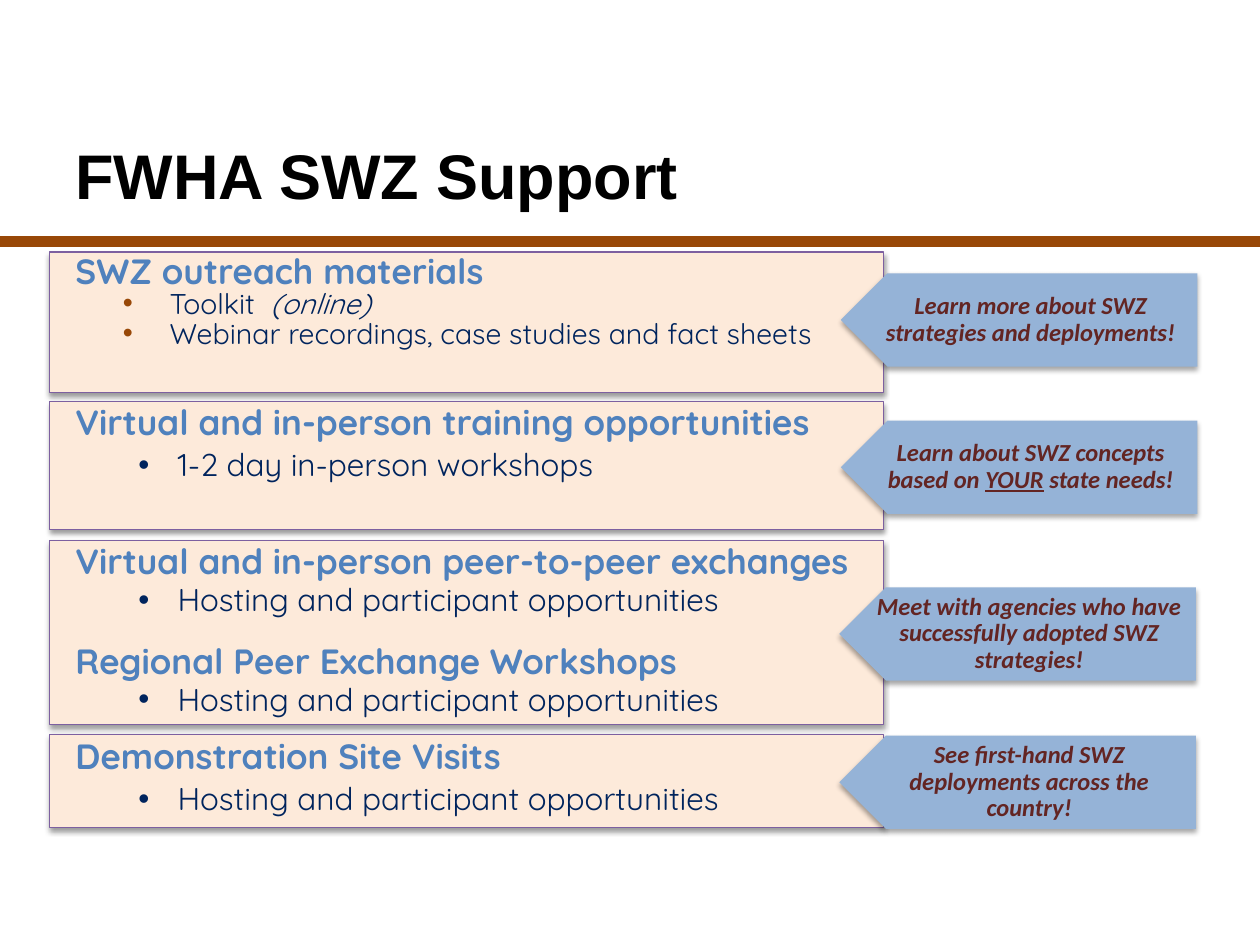
from dataclasses import dataclass

import pptx
import pptx.dml.color
import pptx.enum.shapes
import pptx.enum.text
import pptx.oxml
import pptx.oxml.ns
import pptx.util
from pptx.util import Cm

BODY_FONT = "Quicksand"
HEADING_COLOR = "4F81BD"
ITEM_COLOR = "00245D"
RULE_COLOR = "984807"
SHADOW_COLOR = "000000"


@dataclass
class Span:
    text: str
    italic: bool = False
    underline: bool = False


@dataclass
class Line:
    spans: list[Span]
    heading: bool = False
    size: float = 18
    spacing: float | None = 0.9
    before: float = 3.6
    indent: float = 2.06
    hanging: float = 0.79
    bullet_color: str = ITEM_COLOR


@dataclass
class Topic:
    top: float
    height: float
    text_top: float
    text_width: float
    text_height: float
    lines: list[Line]
    callout_top: float
    callout_left: float
    callout: list[Span]


def heading(text: str, spacing: float | None = 0.9, before: float = 0) -> Line:
    return Line([Span(text)], True, 20, spacing, before)


def item(text: str, spacing: float = 0.9) -> Line:
    return Line([Span(text)], spacing=spacing)


def outreach(*spans: Span) -> Line:
    return Line(list(spans), False, 16.3, 0.7, 3.3, 1.9, 0.94, RULE_COLOR)


HOSTING = "Hosting and participant opportunities"
TOPICS = [
    Topic(5.08, 2.84, 5.13, 15.67, 2.69,
          [heading("SWZ outreach materials", 0.7),
           outreach(Span("Toolkit  "), Span("(online)", italic=True)),
           outreach(Span("Webinar recordings, case studies and fact sheets"))],
          5.51, 16.95, [Span("Learn more about SWZ strategies and deployments!", True)]),
    Topic(8.1, 2.57, 8.05, 16.56, 2.72,
          [heading("Virtual and in-person training opportunities"),
           item("1-2 day in-person workshops")],
          8.48, 16.95, [Span("Learn about SWZ concepts based on ", True),
                        Span("YOUR", True, True), Span(" state needs!", True)]),
    Topic(10.9, 3.71, 10.92, 16.61, 3.96,
          [heading("Virtual and in-person peer-to-peer exchanges", 0.8),
           item(HOSTING, 0.8),
           heading("Regional Peer Exchange Workshops", None, 12),
           item(HOSTING, 0.8)],
          11.84, 16.92,
          [Span("Meet with agencies who have successfully adopted SWZ strategies!", True)]),
    Topic(14.81, 1.88, 14.78, 15.67, 1.93,
          [heading("Demonstration Site Visits"), item(HOSTING)],
          14.83, 16.92, [Span("See first-hand SWZ deployments across the country!", True)]),
]


def rgb(color: str) -> pptx.dml.color.RGBColor:
    return pptx.dml.color.RGBColor.from_string(color)


def element(markup: str):
    namespace = pptx.oxml.ns.nsdecls("a")
    return pptx.oxml.parse_xml(markup.replace(">", f" {namespace}>", 1))


def add_run(paragraph, span: Span, font: str, size: float, color: str, bold: bool) -> None:
    run = paragraph.add_run()
    run.text = span.text
    run.font.name = font
    run.font.size = pptx.util.Pt(size)
    run.font.color.rgb = rgb(color)
    run.font.bold = bold
    run.font.italic = span.italic
    run.font.underline = span.underline


def add_shadow(shape, opacity: int, distance: float) -> None:
    shape.shadow.inherit = False
    effects = shape._element.spPr.find(pptx.oxml.ns.qn("a:effectLst"))
    shadow = element(
        f'<a:outerShdw><a:srgbClr val="{SHADOW_COLOR}">'
        f'<a:alpha val="{opacity * 1000}"/></a:srgbClr></a:outerShdw>')
    shadow.set("blurRad", str(pptx.util.Pt(3.1)))
    shadow.set("dist", str(pptx.util.Pt(distance)))
    shadow.set("dir", "5400000")
    shadow.set("rotWithShape", "0")
    effects.append(shadow)


def add_bullet(paragraph, line: Line) -> None:
    properties = paragraph._p.get_or_add_pPr()
    properties.set("marL", str(Cm(line.indent)))
    properties.set("indent", str(-Cm(line.hanging)))
    properties.append(element(f'<a:buClr><a:srgbClr val="{line.bullet_color}"/></a:buClr>'))
    properties.append(element('<a:buFont ></a:buFont>'))
    properties[-1].set("typeface", "Arial")
    properties.append(element('<a:buChar ></a:buChar>'))
    properties[-1].set("char", "•")


def add_title(slide, text: str) -> None:
    title = slide.shapes.add_textbox(Cm(1.27), Cm(2.34), Cm(22.86), Cm(2.34))
    frame = title.text_frame
    frame.word_wrap = True
    frame.vertical_anchor = pptx.enum.text.MSO_ANCHOR.MIDDLE
    add_run(frame.paragraphs[0], Span(text), "Arial", 36, "000000", True)


def add_rule(slide) -> None:
    rule = slide.shapes.add_connector(
        pptx.enum.shapes.MSO_CONNECTOR.STRAIGHT, Cm(0), Cm(4.87), Cm(25.4), Cm(4.87))
    rule.line.color.rgb = rgb(RULE_COLOR)
    rule.line.width = pptx.util.Pt(6)
    rule._element.spPr.append(element("<a:effectLst></a:effectLst>"))


def add_panel(slide, topic: Topic) -> None:
    panel = slide.shapes.add_shape(
        pptx.enum.shapes.MSO_SHAPE.RECTANGLE,
        Cm(1), Cm(topic.top), Cm(16.81), Cm(topic.height))
    panel.fill.solid()
    panel.fill.fore_color.rgb = rgb("FDEADA")
    panel.line.color.rgb = rgb("7D60A0")
    panel.line.width = pptx.util.Pt(0.75)
    add_shadow(panel, 38, 1.6)


def add_lines(slide, topic: Topic) -> None:
    body = slide.shapes.add_textbox(
        Cm(1.27), Cm(topic.text_top), Cm(topic.text_width), Cm(topic.text_height))
    frame = body.text_frame
    frame.word_wrap = True
    for index, line in enumerate(topic.lines):
        paragraph = frame.add_paragraph() if index else frame.paragraphs[0]
        if line.spacing:
            paragraph.line_spacing = line.spacing
        if line.before:
            paragraph.space_before = pptx.util.Pt(line.before)
        if not line.heading:
            add_bullet(paragraph, line)
        color = HEADING_COLOR if line.heading else ITEM_COLOR
        for span in line.spans:
            add_run(paragraph, span, BODY_FONT, line.size, color, line.heading)


def add_callout(slide, topic: Topic) -> None:
    callout = slide.shapes.add_shape(
        pptx.enum.shapes.MSO_SHAPE.PENTAGON,
        Cm(topic.callout_left), Cm(topic.callout_top), Cm(7.19), Cm(1.88))
    callout._element.spPr.xfrm.set("flipH", "1")
    callout.fill.solid()
    callout.fill.fore_color.rgb = rgb("95B3D7")
    callout.line.fill.background()
    add_shadow(callout, 35, 1.8)
    frame = callout.text_frame
    frame.word_wrap = True
    frame.auto_size = pptx.enum.text.MSO_AUTO_SIZE.SHAPE_TO_FIT_TEXT
    frame.vertical_anchor = pptx.enum.text.MSO_ANCHOR.MIDDLE
    paragraph = frame.paragraphs[0]
    paragraph.alignment = pptx.enum.text.PP_ALIGN.CENTER
    paragraph.line_spacing = 0.9
    for span in topic.callout:
        add_run(paragraph, span, "Calibri", 14, "632523", True)


def main() -> None:
    deck = pptx.Presentation()
    deck.slide_width, deck.slide_height = Cm(25.4), Cm(19.05)
    slide = deck.slides.add_slide(deck.slide_layouts[6])
    add_rule(slide)
    add_title(slide, "FWHA SWZ Support")
    for draw in (add_panel, add_lines, add_callout):
        for topic in TOPICS:
            draw(slide, topic)
    deck.save("out.pptx")


if __name__ == "__main__":
    main()
